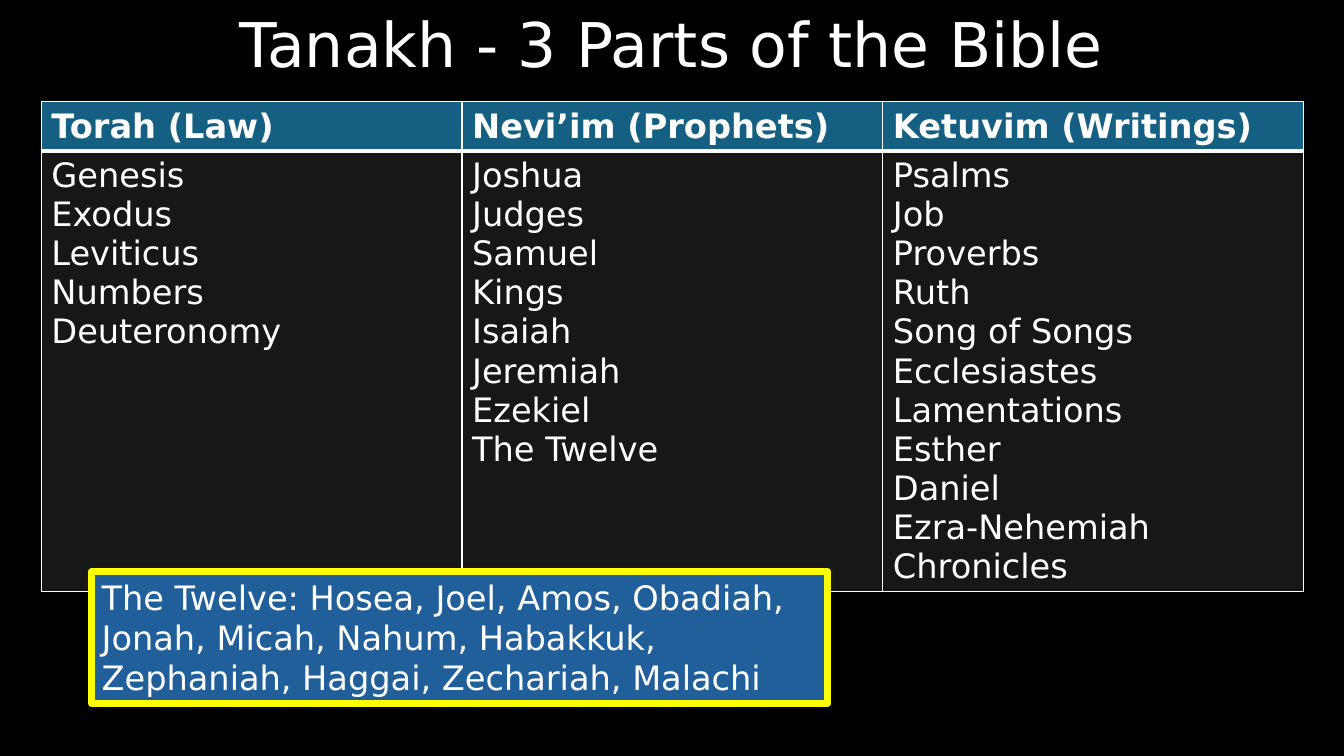
from lxml import etree
from pptx import Presentation
from pptx.dml.color import RGBColor
from pptx.enum.shapes import MSO_SHAPE
from pptx.enum.text import MSO_ANCHOR, MSO_AUTO_SIZE, PP_ALIGN
from pptx.oxml.ns import qn
from pptx.util import Inches, Pt

FONT = "DejaVu Sans"
COLORS = {
    "background": "000000",
    "text": "FFFFFF",
    "header": "156082",
    "body": "171717",
    "note": "215F9A",
    "note_line": "FFFF00",
}
PARTS = {
    "Torah (Law)": ["Genesis", "Exodus", "Leviticus", "Numbers", "Deuteronomy"],
    "Nevi’im (Prophets)": [
        "Joshua", "Judges", "Samuel", "Kings",
        "Isaiah", "Jeremiah", "Ezekiel", "The Twelve",
    ],
    "Ketuvim (Writings)": [
        "Psalms", "Job", "Proverbs", "Ruth", "Song of Songs", "Ecclesiastes",
        "Lamentations", "Esther", "Daniel", "Ezra-Nehemiah", "Chronicles",
    ],
}
THE_TWELVE = (
    "The Twelve: Hosea, Joel, Amos, Obadiah, Jonah, Micah, Nahum, "
    "Habakkuk, Zephaniah, Haggai, Zechariah, Malachi"
)


def color(name):
    return RGBColor.from_string(COLORS[name])


def set_fill(fill, name):
    fill.solid()
    fill.fore_color.rgb = color(name)


def write_text(tf, lines, size=24, bold=False, align=PP_ALIGN.LEFT):
    tf.text = "\n".join(lines)
    for p in tf.paragraphs:
        p.alignment = align
        p.font.name = FONT
        p.font.size = Pt(size)
        p.font.bold = bold
        p.font.color.rgb = color("text")


def add_border(cell, side, width):
    tc_pr = cell._tc.get_or_add_tcPr()
    ln = etree.SubElement(tc_pr, qn(f"a:ln{side}"), w=str(Pt(width)))
    solid = etree.SubElement(ln, qn("a:solidFill"))
    etree.SubElement(solid, qn("a:srgbClr"), val=COLORS["text"])


def format_cell(cell, lines, fill, widths, bold=False):
    write_text(cell.text_frame, lines, bold=bold)
    for side, width in zip("LRTB", widths):
        add_border(cell, side, width)
    set_fill(cell.fill, fill)


def add_title(slide, text):
    title = slide.shapes.title
    title.left, title.top = Inches(0), Inches(0)
    title.width, title.height = Inches(13.33), Inches(0.95)
    tf = title.text_frame
    tf.vertical_anchor = MSO_ANCHOR.MIDDLE
    write_text(tf, [text], size=44, align=PP_ALIGN.CENTER)
    tf.paragraphs[0].line_spacing = 0.9


def add_parts_table(slide):
    table = slide.shapes.add_table(
        2, len(PARTS), Inches(0.41), Inches(1.01), Inches(12.52), Inches(4.86)
    ).table
    table.rows[0].height = Inches(0.49)
    table.rows[1].height = Inches(4.37)
    for col, (part, books) in enumerate(PARTS.items()):
        format_cell(table.cell(0, col), [part], "header", (1, 1, 1, 3), bold=True)
        format_cell(table.cell(1, col), books, "body", (1, 1, 3, 1))


def add_note(slide, text):
    sp = slide.shapes.add_shape(
        MSO_SHAPE.RECTANGLE, Inches(0.91), Inches(5.67), Inches(7.3), Inches(1.31)
    )
    sp.shadow.inherit = False
    set_fill(sp.fill, "note")
    sp.line.color.rgb = color("note_line")
    sp.line.width = Pt(5)
    tf = sp.text_frame
    tf.word_wrap = True
    tf.auto_size = MSO_AUTO_SIZE.SHAPE_TO_FIT_TEXT
    tf.vertical_anchor = MSO_ANCHOR.TOP
    write_text(tf, [text])


def main():
    prs = Presentation()
    prs.slide_width, prs.slide_height = Inches(13.33), Inches(7.5)
    slide = prs.slides.add_slide(prs.slide_layouts.get_by_name("Title Only"))
    set_fill(slide.background.fill, "background")
    add_title(slide, "Tanakh - 3 Parts of the Bible")
    add_parts_table(slide)
    add_note(slide, THE_TWELVE)
    prs.save("out.pptx")


if __name__ == "__main__":
    main()
